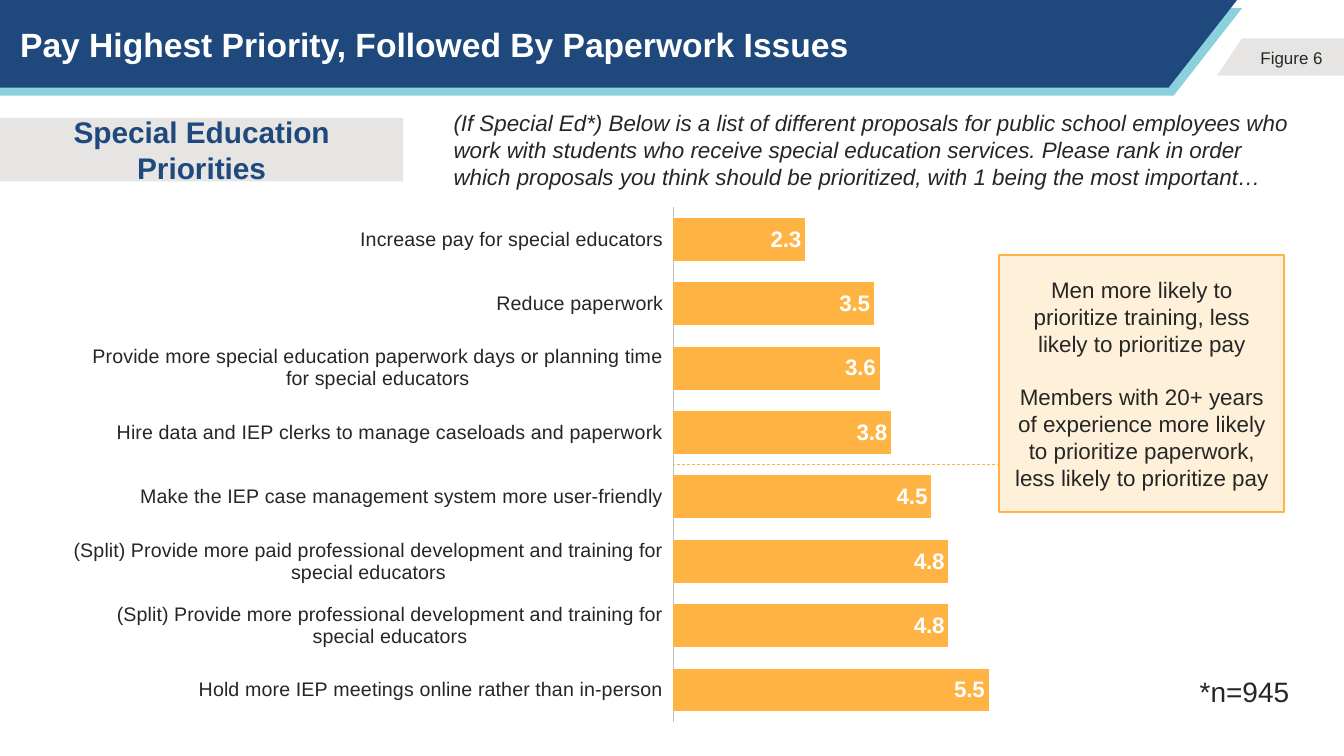
from lxml import etree
from pptx import Presentation
from pptx.chart.data import CategoryChartData
from pptx.dml.color import RGBColor
from pptx.enum.chart import XL_CHART_TYPE, XL_LABEL_POSITION, XL_TICK_LABEL_POSITION, XL_TICK_MARK
from pptx.enum.dml import MSO_LINE
from pptx.enum.shapes import MSO_CONNECTOR, MSO_SHAPE
from pptx.enum.text import MSO_ANCHOR, PP_ALIGN
from pptx.oxml import parse_xml
from pptx.oxml.ns import nsdecls, qn
from pptx.util import Inches, Pt

NAVY = RGBColor(0x1F, 0x49, 0x7D)
AQUA = RGBColor(0x8B, 0xD1, 0xDD)
GRAY = RGBColor(0xE6, 0xE5, 0xE3)
AXIS = RGBColor(0xBF, 0xBF, 0xBF)
ORANGE = RGBColor(0xFE, 0xB3, 0x42)
CREAM = RGBColor(0xFF, 0xF0, 0xD9)
DARK = RGBColor(0x26, 0x26, 0x26)
WHITE = RGBColor(0xFF, 0xFF, 0xFF)

prs = Presentation()
prs.slide_width, prs.slide_height = Inches(13.33), Inches(7.5)
s = prs.slides.add_slide(prs.slide_layouts[6])


def add_outline(points, color):
    start, *rest = [(Inches(x), Inches(y)) for x, y in points]
    builder = s.shapes.build_freeform(*start)
    builder.add_line_segments(rest, close=True)
    sp = builder.convert_to_shape()
    sp.shadow.inherit = False
    sp.fill.solid()
    sp.fill.fore_color.rgb = color
    sp.line.fill.background()


def add_text(box, texts, size, color=DARK, bold=False, italic=False,
             align=PP_ALIGN.LEFT, anchor=MSO_ANCHOR.MIDDLE, fill=None, line=None, inset=0.1):
    box = [Inches(v) for v in box]
    if fill is None:
        sp = s.shapes.add_textbox(*box)
    else:
        sp = s.shapes.add_shape(MSO_SHAPE.RECTANGLE, *box)
        sp.shadow.inherit = False
        sp.fill.solid()
        sp.fill.fore_color.rgb = fill
        if line is None:
            sp.line.fill.background()
        else:
            sp.line.color.rgb = line
            sp.line.width = Pt(1.5)
    tf = sp.text_frame
    tf.word_wrap = True
    tf.vertical_anchor = anchor
    tf.margin_left = tf.margin_right = Inches(inset)
    for i, text in enumerate(texts):
        p = tf.paragraphs[0] if i == 0 else tf.add_paragraph()
        p.text = text
        p.alignment = align
        if i:
            p.space_before = Pt(19)
        f = p.font
        f.name, f.size, f.bold, f.italic = "Arial", Pt(size), bold, italic
        f.color.rgb = color


# Header bands and figure tab
for right, top, color in [(12.32, 0.08, AQUA), (12.27, 0, NAVY)]:
    bottom = top + 0.87
    add_outline([(0, top), (right, top), (right - 0.68, bottom), (0, bottom)], color)
add_outline([(12.32, 0.38), (13.33, 0.38), (13.33, 0.75), (12.07, 0.75)], GRAY)
add_text((12.34, 0.42, 0.94, 0.3), ["Figure 6"], 12.1, align=PP_ALIGN.CENTER)

# Title, section label and question
add_text((0, 0, 12.27, 0.87), ["Pay Highest Priority, Followed By Paperwork Issues"],
         24, WHITE, bold=True, inset=0.2)
add_text((0, 1.17, 4, 0.63), ["Special Education Priorities"], 21.3, NAVY, bold=True,
         align=PP_ALIGN.CENTER, fill=GRAY)
add_text((4.4, 1.14, 8.53, 0.68),
         ["(If Special Ed*) Below is a list of different proposals for public school employees who "
          "work with students who receive special education services. Please rank in order which "
          "proposals you think should be prioritized, with 1 being the most important…"],
         16, italic=True)

# Ranking chart
rankings = [
    ("Increase pay for special educators", 2.3),
    ("Reduce paperwork", 3.5),
    ("Provide more special education paperwork days or planning time for special educators", 3.6),
    ("Hire data and IEP clerks to manage caseloads and paperwork", 3.8),
    ("Make the IEP case management system more user-friendly", 4.5),
    ("(Split) Provide more paid professional development and training for special educators", 4.8),
    ("(Split) Provide more professional development and training for special educators", 4.8),
    ("Hold more IEP meetings online rather than in-person", 5.5),
]
data = CategoryChartData()
data.categories = [name for name, _ in rankings]
data.add_series("Series 1", [value for _, value in rankings])
chart = s.shapes.add_chart(XL_CHART_TYPE.BAR_CLUSTERED, Inches(0.73), Inches(2.05),
                           Inches(11.87), Inches(5.12), data).chart
chart.has_legend = False
chart.has_title = False
chart.font.name, chart.font.size = "Arial", Pt(14)
chart.font.color.rgb = DARK

cat = chart.category_axis
cat.reverse_order = True
cat.major_tick_mark = XL_TICK_MARK.NONE
cat.tick_label_position = XL_TICK_LABEL_POSITION.LOW
cat.format.line.color.rgb = AXIS
cat.format.line.width = Pt(0.75)
val = chart.value_axis
val.minimum_scale, val.maximum_scale = 0, 10
val.has_major_gridlines = False
val.visible = False

plot = chart.plots[0]
plot.gap_width = 50
plot.vary_by_categories = False
bars = plot.series[0].format.fill
bars.solid()
bars.fore_color.rgb = ORANGE
plot.has_data_labels = True
labels = plot.data_labels
labels.show_value = True
labels.number_format, labels.number_format_is_linked = "0.0", False
labels.position = XL_LABEL_POSITION.INSIDE_END
labels.font.name, labels.font.size, labels.font.bold = "Arial", Pt(16), True
labels.font.color.rgb = WHITE

# Fixed inner plot area
area = chart._chartSpace.chart.plotArea
for old in area.findall(qn("c:layout")):
    area.remove(old)
area.insert(0, parse_xml(
    f'<c:layout {nsdecls("c")}><c:manualLayout><c:layoutTarget val="inner"/>'
    '<c:xMode val="edge"/><c:yMode val="edge"/><c:x val="0.5"/><c:y val="0"/>'
    '<c:w val="0.48"/><c:h val="1"/></c:manualLayout></c:layout>'))

# Dashed divider between the top four and the rest
divider = s.shapes.add_connector(MSO_CONNECTOR.STRAIGHT, Inches(12.15), Inches(4.61),
                                 Inches(6.68), Inches(4.61))
divider.line.color.rgb = ORANGE
divider.line.width = Pt(0.5)
divider.line.dash_style = MSO_LINE.DASH
etree.SubElement(divider._element.spPr, qn("a:effectLst"))

# Callout and sample size
add_text((9.91, 2.53, 2.83, 2.55),
         ["Men more likely to prioritize training, less likely to prioritize pay",
          "Members with 20+ years of experience more likely to prioritize paperwork, "
          "less likely to prioritize pay"],
         16, align=PP_ALIGN.CENTER, fill=CREAM, line=ORANGE)
add_text((11.8, 6.64, 1.36, 0.44), ["*n=945"], 20, anchor=MSO_ANCHOR.TOP)

prs.save("out.pptx")
